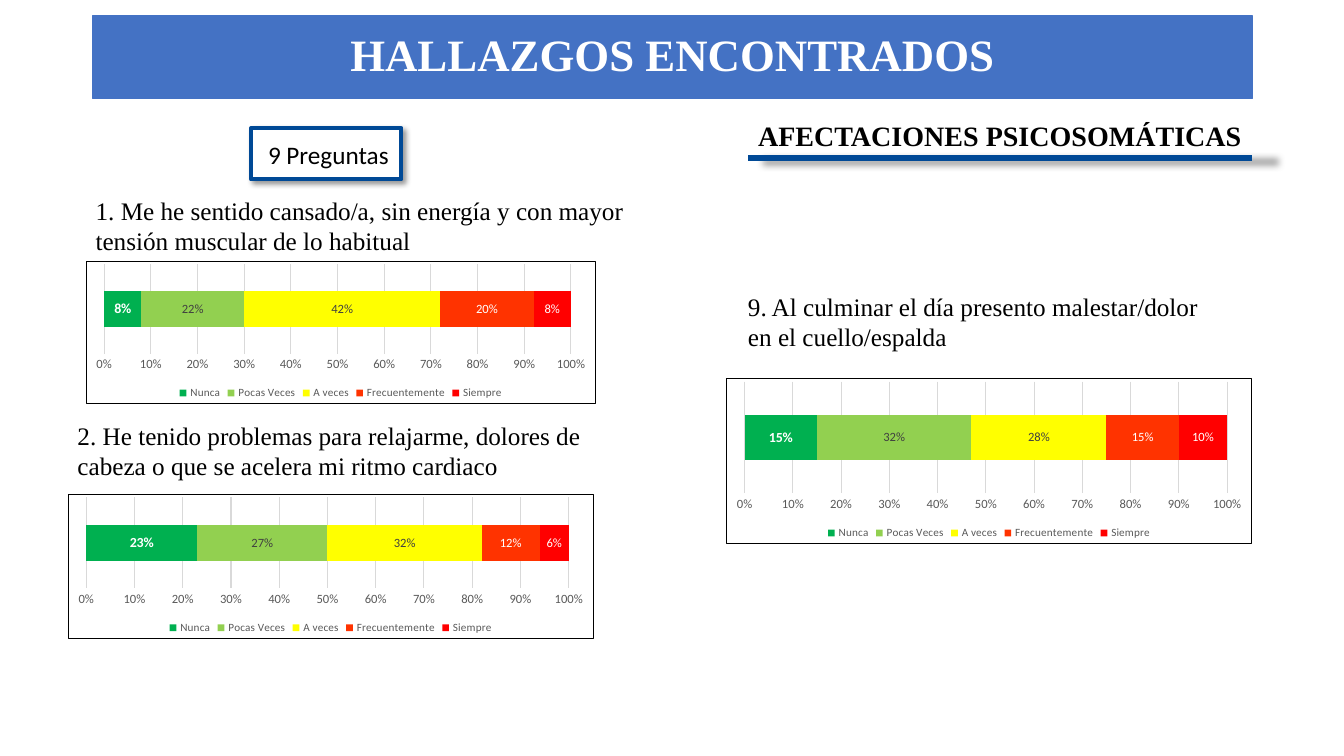
from lxml.etree import SubElement
from pptx import Presentation
from pptx.chart.data import CategoryChartData
from pptx.dml.color import RGBColor
from pptx.enum.chart import (XL_CHART_TYPE, XL_LABEL_POSITION,
                             XL_LEGEND_POSITION, XL_TICK_MARK)
from pptx.enum.shapes import MSO_CONNECTOR, MSO_SHAPE
from pptx.enum.text import MSO_ANCHOR, MSO_AUTO_SIZE, PP_ALIGN
from pptx.oxml import parse_xml
from pptx.oxml.ns import nsdecls, qn
from pptx.util import Inches, Pt

COLORS = {
    "white": "FFFFFF", "black": "000000", "banner": "4472C4", "navy": "004996",
    "grid": "D9D9D9", "gray": "595959", "dark": "404040",
    "green": "00B050", "lime": "92D050", "yellow": "FFFF00",
    "orange": "FF3300", "red": "FF0000",
}
SERIF, SANS = "Times New Roman", "Calibri"
# name, bar color, label color
ANSWERS = [
    ("Nunca", "green", "white"),
    ("Pocas Veces", "lime", "dark"),
    ("A veces", "yellow", "dark"),
    ("Frecuentemente", "orange", "white"),
    ("Siempre", "red", "white"),
]
# question, text box, chart box, shares
ITEMS = [
    ("1. Me he sentido cansado/a, sin energía y con mayor tensión muscular de lo habitual",
     (0.85, 1.89, 5.8, 0.71), (0.85, 2.59, 5.06, 1.42), (0.08, 0.22, 0.42, 0.2, 0.08)),
    ("2. He tenido problemas para relajarme, dolores de cabeza o que se acelera mi ritmo cardiaco",
     (0.67, 4.12, 5.8, 0.71), (0.67, 4.9, 5.22, 1.44), (0.23, 0.27, 0.32, 0.12, 0.06)),
    ("9. Al culminar el día presento malestar/dolor en el cuello/espalda",
     (7.32, 2.84, 4.83, 0.71), (7.2, 3.75, 5.22, 1.65), (0.15, 0.32, 0.28, 0.15, 0.1)),
]


def rgb(name):
    return RGBColor.from_string(COLORS[name])


def inches(box):
    return [Inches(v) for v in box]


def style(font, size, color, face=SANS, bold=False):
    font.size, font.name, font.bold = Pt(size), face, bold
    font.color.rgb = rgb(color)


class Deck:
    """Holds the presentation and its current slide."""

    def __init__(self):
        self.prs = Presentation()
        self.prs.slide_width, self.prs.slide_height = Inches(13.33), Inches(7.5)
        self.slide = self.prs.slides.add_slide(self.prs.slide_layouts[5])
        self.shapes = self.slide.shapes

    def add_run(self, para, text, size, color="black", face=SERIF, bold=False):
        run = para.add_run()
        run.text = text
        style(run.font, size, color, face, bold)

    def paint(self, shape, fill, line, width):
        shape.fill.solid()
        shape.fill.fore_color.rgb = rgb(fill)
        shape.line.color.rgb = rgb(line)
        shape.line.width = Pt(width)

    def shade(self, shape, blur, dist=0, angle=0, scale=100):
        """Give the shape a black outer shadow at 40% opacity."""
        props = shape._element.spPr
        effects = SubElement(props, qn("a:effectLst"))
        outer = SubElement(
            effects, qn("a:outerShdw"), blurRad=str(Pt(blur)), dist=str(Pt(dist)),
            dir=str(angle * 60000), sx=str(scale * 1000), sy=str(scale * 1000),
            algn="tl", rotWithShape="0")
        color = SubElement(outer, qn("a:srgbClr"), val=COLORS["black"])
        SubElement(color, qn("a:alpha"), val="40000")

    def title(self, text, box):
        shape = self.shapes.title
        shape.left, shape.top, shape.width, shape.height = inches(box)
        self.paint(shape, "banner", "banner", 1)
        frame = shape.text_frame
        frame.auto_size = MSO_AUTO_SIZE.NONE
        frame.vertical_anchor = MSO_ANCHOR.MIDDLE
        para = frame.paragraphs[0]
        para.alignment, para.line_spacing = PP_ALIGN.CENTER, 0.9
        self.add_run(para, text, 32, "white", bold=True)

    def text(self, text, box, size=18, **look):
        frame = self.shapes.add_textbox(*inches(box)).text_frame
        frame.word_wrap = True
        frame.auto_size = MSO_AUTO_SIZE.SHAPE_TO_FIT_TEXT
        self.add_run(frame.paragraphs[0], text, size, **look)

    def frame(self, box):
        shape = self.shapes.add_shape(MSO_SHAPE.RECTANGLE, *inches(box))
        self.paint(shape, "white", "navy", 3)
        self.shade(shape, 4, 3, 45)

    def rule(self, start, end):
        line = self.shapes.add_connector(MSO_CONNECTOR.STRAIGHT, *inches(start + end))
        line.line.color.rgb = rgb("navy")
        line.line.width = Pt(4.5)
        self.shade(line, 5, scale=102)

    def chart(self, box, shares):
        data = CategoryChartData(number_format="0%")
        data.categories = ["1"]
        for (name, _, _), share in zip(ANSWERS, shares):
            data.add_series(name, [share])
        chart = self.shapes.add_chart(
            XL_CHART_TYPE.BAR_STACKED_100, *inches(box), data).chart
        style(chart.font, 10, "black")
        chart.has_title = False
        chart.has_legend = True
        chart.legend.position = XL_LEGEND_POSITION.BOTTOM
        chart.legend.include_in_layout = False
        style(chart.legend.font, 8, "gray")
        self.axes(chart)
        plot = chart.plots[0]
        plot.gap_width, plot.overlap, plot.vary_by_categories = 150, 100, False
        for series, (name, fill, ink) in zip(plot.series, ANSWERS):
            series.format.fill.solid()
            series.format.fill.fore_color.rgb = rgb(fill)
            labels = series.data_labels
            labels.show_value = True
            labels.position = XL_LABEL_POSITION.CENTER
            labels.number_format, labels.number_format_is_linked = "0%", False
            first = name == "Nunca"
            style(labels.font, 10 if first else 9, ink, bold=first)
        self.border(chart)

    def axes(self, chart):
        chart.category_axis.visible = False
        axis = chart.value_axis
        axis.major_tick_mark = axis.minor_tick_mark = XL_TICK_MARK.NONE
        axis.format.line.fill.background()
        axis.has_major_gridlines = True
        grid = axis.major_gridlines.format.line
        grid.color.rgb, grid.width = rgb("grid"), Pt(0.75)
        labels = axis.tick_labels
        labels.number_format, labels.number_format_is_linked = "0%", False
        style(labels.font, 9, "gray")

    def border(self, chart):
        """Fill the chart area white and outline it in black."""
        area = parse_xml(
            f'<c:spPr {nsdecls("c", "a")}>'
            f'<a:solidFill><a:srgbClr val="{COLORS["white"]}"/></a:solidFill>'
            f'<a:ln w="{Pt(0.75)}"><a:solidFill><a:srgbClr val="{COLORS["black"]}"/>'
            '</a:solidFill></a:ln></c:spPr>')
        chart._chartSpace.find(qn("c:chart")).addnext(area)


def main():
    deck = Deck()
    deck.title("HALLAZGOS ENCONTRADOS", (0.92, 0.16, 11.5, 0.82))
    for text, spot, box, shares in ITEMS:
        deck.text(text, spot)
        deck.chart(box, shares)
    deck.text("AFECTACIONES PSICOSOMÁTICAS", (7.42, 1.13, 5, 0.44), 20, bold=True)
    deck.rule((12.42, 1.57), (7.42, 1.57))
    deck.frame((2.49, 1.27, 1.49, 0.51))
    deck.text("9 Preguntas", (2.56, 1.33, 1.42, 0.4), face=SANS)
    deck.prs.save("out.pptx")


if __name__ == "__main__":
    main()
